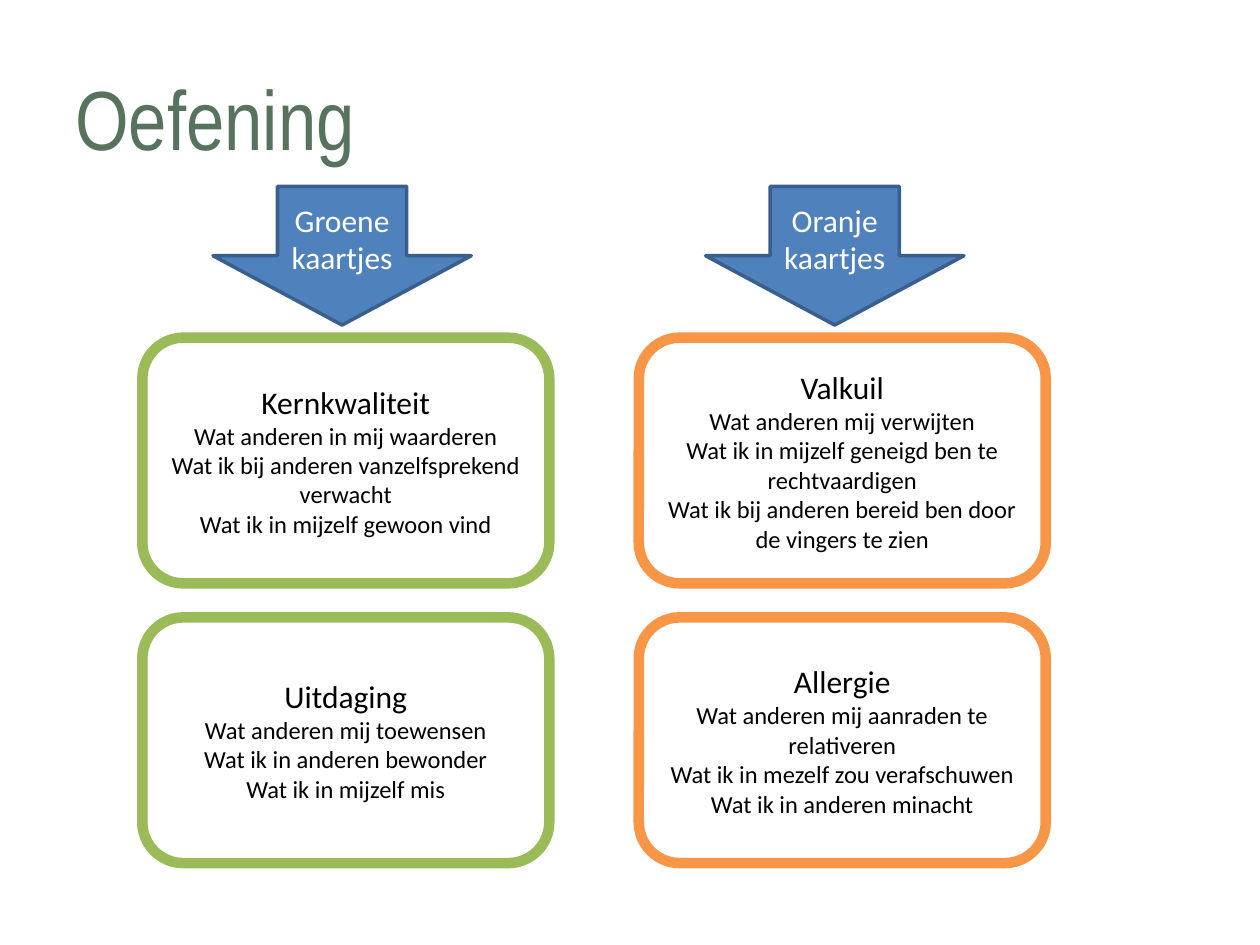
from dataclasses import dataclass

from pptx import Presentation
from pptx import util as u
from pptx.dml.color import RGBColor
from pptx.enum import shapes, text


@dataclass(frozen=True)
class Theme:
    """Colours, fonts and type sizes of the slide."""
    title_font: str = "Arial Narrow"
    body_font: str = "Calibri"
    title_size: int = 48
    label_size: int = 18
    body_size: int = 14
    title: str = "58735D"
    black: str = "000000"
    white: str = "FFFFFF"
    blue: str = "4F81BD"
    dark_blue: str = "3A5F8C"
    green: str = "9BBB59"
    orange: str = "F79646"


THEME = Theme()
CARD_TOPS = (2.68, 4.9)
COLUMNS = [
    (1.69, ["Groene", "kaartjes"], 1.13, THEME.green, [
        ["Kernkwaliteit", "Wat anderen in mij waarderen",
         "Wat ik bij anderen vanzelfsprekend verwacht",
         "Wat ik in mijzelf gewoon vind"],
        ["Uitdaging", "Wat anderen mij toewensen",
         "Wat ik in anderen bewonder", "Wat ik in mijzelf mis"],
    ]),
    (5.6, ["Oranje", "kaartjes"], 5.07, THEME.orange, [
        ["Valkuil", "Wat anderen mij verwijten",
         "Wat ik in mijzelf geneigd ben te rechtvaardigen",
         "Wat ik bij anderen bereid ben door de vingers te zien"],
        ["Allergie", "Wat anderen mij aanraden te relativeren",
         "Wat ik in mezelf zou verafschuwen", "Wat ik in anderen minacht"],
    ]),
]


def write_lines(box, lines, sizes, font, color, align):
    """Fill a box with one paragraph per line, vertically centred."""
    frame = box.text_frame
    frame.word_wrap = True
    frame.vertical_anchor = text.MSO_ANCHOR.MIDDLE
    frame.text = "\n".join(lines)
    for para, size in zip(frame.paragraphs, sizes):
        para.alignment = align
        span = para.runs[0]
        for name, value in {"name": font, "size": u.Pt(size)}.items():
            setattr(span.font, name, value)
        span.font.color.rgb = RGBColor.from_string(color)


def add_title(page, title):
    """Add the slide title."""
    box = page.shapes.add_textbox(*map(u.Inches, (0.5, 0.3, 8.23, 1.25)))
    write_lines(box, [title], [THEME.title_size], THEME.title_font,
                THEME.title, text.PP_ALIGN.LEFT)


def add_panel(page, kind, place, fill, line, weight, lines, sizes, color):
    """Add an outlined shape with centred text."""
    box = page.shapes.add_shape(kind, *map(u.Inches, place))
    box.shadow.inherit = False
    box.fill.solid()
    box.fill.fore_color.rgb = RGBColor.from_string(fill)
    box.line.color.rgb = RGBColor.from_string(line)
    box.line.width = u.Pt(weight)
    write_lines(box, lines, sizes, THEME.body_font, color,
                text.PP_ALIGN.CENTER)


def add_arrow(page, left, lines):
    """Add a down arrow that names the cards below it."""
    add_panel(page, shapes.MSO_SHAPE.DOWN_ARROW, (left, 1.48, 2.05, 1.1),
              THEME.blue, THEME.dark_blue, 2, lines,
              [THEME.label_size] * len(lines), THEME.white)


def add_card(page, left, top, color, lines):
    """Add a rounded card with a heading and its statements."""
    sizes = [THEME.label_size] + [THEME.body_size] * (len(lines) - 1)
    add_panel(page, shapes.MSO_SHAPE.ROUNDED_RECTANGLE,
              (left, top, 3.23, 1.95), THEME.white, color, 6, lines,
              sizes, THEME.black)


def main():
    """Build the exercise slide and save it."""
    deck = Presentation()
    deck.slide_width, deck.slide_height = u.Inches(10), u.Inches(7.5)
    page = deck.slides.add_slide(deck.slide_layouts[6])
    add_title(page, "Oefening")
    for arrow_left, label, card_left, color, cards in COLUMNS:
        add_arrow(page, arrow_left, label)
        for top, lines in zip(CARD_TOPS, cards):
            add_card(page, card_left, top, color, lines)
    deck.save("out.pptx")


if __name__ == "__main__":
    main()
